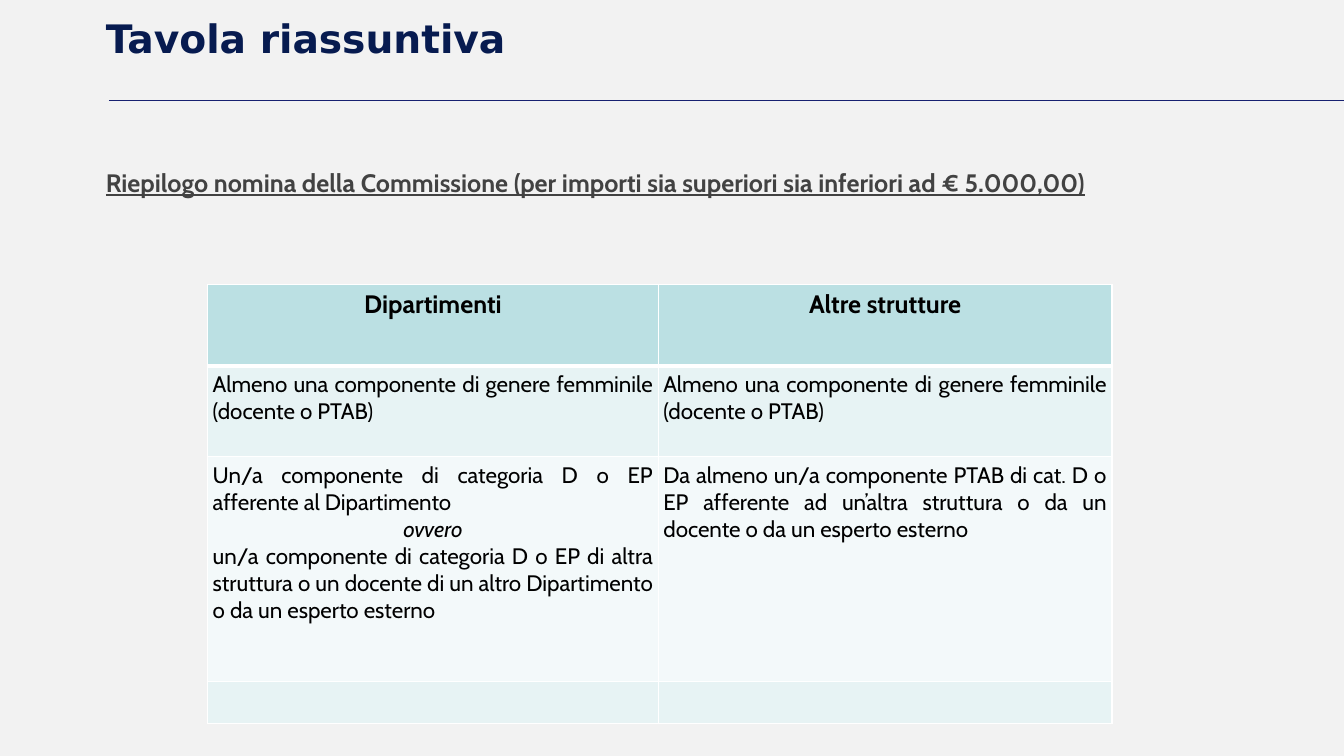
"""Build the summary slide on how the Commission is appointed."""
import lxml.etree
import pptx
import pptx.dml.color
import pptx.enum.shapes
import pptx.enum.text
import pptx.oxml.ns
import pptx.util

Inches = pptx.util.Inches
Pt = pptx.util.Pt
RGBColor = pptx.dml.color.RGBColor
Align = pptx.enum.text.PP_ALIGN
Anchor = pptx.enum.text.MSO_ANCHOR
qn = pptx.oxml.ns.qn

BACKGROUND = RGBColor(0xF2, 0xF2, 0xF2)
NAVY = RGBColor(0x07, 0x1B, 0x50)
RULE_BLUE = RGBColor(0x17, 0x21, 0x71)
GREY = RGBColor(0x42, 0x42, 0x42)
BLACK = RGBColor(0, 0, 0)
WHITE = RGBColor(0xFF, 0xFF, 0xFF)
HEADER_TEAL = RGBColor(0xBB, 0xE0, 0xE3)
BAND_TEAL = RGBColor(0xE7, 0xF3, 0xF4)
BAND_PALE = RGBColor(0xF3, 0xF9, 0xFA)

HEADINGS = ("Dipartimenti", "Altre strutture")
GENDER_RULE = "Almeno una componente di genere femminile (docente o PTAB)"
DEPARTMENT_RULE = (
    "Un/a componente di categoria D o EP afferente al Dipartimento",
    "ovvero",
    "un/a componente di categoria D o EP di altra struttura o un docente "
    "di un altro Dipartimento o da un esperto esterno",
)
OTHER_RULE = (
    "Da almeno un/a componente PTAB di cat. D o EP afferente ad un’altra "
    "struttura o da un docente o da un esperto esterno",
)
ROWS = (
    tuple((heading,) for heading in HEADINGS),
    ((GENDER_RULE,), (GENDER_RULE,)),
    (DEPARTMENT_RULE, OTHER_RULE),
    ((), ()),
)
ROW_FILLS = (HEADER_TEAL, BAND_TEAL, BAND_PALE, BAND_TEAL)
ROW_HEIGHTS = (0.81, 0.9, 2.23, 0.42)
COLUMN_WIDTHS = (4.47, 4.5)


class SummarySlide:
    """Hold the slide and its style, and draw each kind of element."""

    title_font = "DejaVu Sans"
    body_font = "Cabin"
    inset = Inches(0.05)

    def __init__(self, presentation):
        self.slide = presentation.slides.add_slide(presentation.slide_layouts[6])
        self.slide.background.fill.solid()
        self.slide.background.fill.fore_color.rgb = BACKGROUND

    def run(self, paragraph, words, size, color, font, bold=False, italic=False,
            underline=False):
        run = paragraph.add_run()
        run.text = words
        run.font.name = font
        run.font.size = Pt(size)
        run.font.color.rgb = color
        run.font.bold = bold
        run.font.italic = italic
        run.font.underline = underline

    def text(self, left, top, width, height, words, size, color, font,
             anchor=Anchor.TOP, spacing=1.0, underline=False):
        box = self.slide.shapes.add_textbox(
            Inches(left), Inches(top), Inches(width), Inches(height))
        frame = box.text_frame
        frame.word_wrap = True
        frame.vertical_anchor = anchor
        frame.margin_left = frame.margin_right = self.inset
        frame.margin_top = frame.margin_bottom = self.inset
        paragraph = frame.paragraphs[0]
        paragraph.line_spacing = spacing
        self.run(paragraph, words, size, color, font, bold=True, underline=underline)

    def rule(self, left, right, y):
        line = self.slide.shapes.add_connector(
            pptx.enum.shapes.MSO_CONNECTOR.STRAIGHT,
            Inches(left), Inches(y), Inches(right), Inches(y))
        line.line.color.rgb = RULE_BLUE
        line.line.width = Pt(0.75)
        lxml.etree.SubElement(line._element.spPr, qn("a:effectLst"))

    def borders(self, cell, widths):
        properties = cell._tc.get_or_add_tcPr()
        for side, width in widths.items():
            edge = lxml.etree.SubElement(properties, qn("a:ln" + side), w=str(Pt(width)))
            fill = lxml.etree.SubElement(edge, qn("a:solidFill"))
            lxml.etree.SubElement(fill, qn("a:srgbClr"), val=str(WHITE))

    def cell(self, cell, paragraphs, fill, header, below_header):
        cell.margin_left = cell.margin_right = self.inset
        cell.margin_top = cell.margin_bottom = self.inset
        self.borders(cell, {"L": 1, "R": 1, "T": 3 if below_header else 1,
                            "B": 3 if header else 1})
        cell.fill.solid()
        cell.fill.fore_color.rgb = fill
        frame = cell.text_frame
        for index, words in enumerate(paragraphs):
            paragraph = frame.add_paragraph() if index else frame.paragraphs[0]
            alternative = words == "ovvero"
            paragraph.alignment = Align.CENTER if header or alternative else Align.JUSTIFY
            self.run(paragraph, words, 18 if header else 16, BLACK, self.body_font,
                     bold=header, italic=alternative)

    def table(self, left, top, rows, fills, widths, heights):
        table = self.slide.shapes.add_table(
            len(rows), len(widths), Inches(left), Inches(top),
            Inches(sum(widths)), Inches(sum(heights))).table
        for column, width in zip(table.columns, widths):
            column.width = Inches(width)
        for row, height in zip(table.rows, heights):
            row.height = Inches(height)
        for r, (contents, fill) in enumerate(zip(rows, fills)):
            for c, paragraphs in enumerate(contents):
                self.cell(table.cell(r, c), paragraphs, fill, r == 0, r == 1)


def main():
    presentation = pptx.Presentation()
    presentation.slide_width = Inches(13.33)
    presentation.slide_height = Inches(7.5)
    summary = SummarySlide(presentation)
    summary.rule(1.08, 13.33, 1)
    summary.text(1, -0.25, 11.33, 1.25, "Tavola riassuntiva", 28, NAVY,
                 summary.title_font, anchor=Anchor.MIDDLE)
    summary.text(1, 1.46, 11.97, 5.36,
                 "Riepilogo nomina della Commissione (per importi sia superiori "
                 "sia inferiori ad € 5.000,00)",
                 18, GREY, summary.body_font, spacing=1.5, underline=True)
    summary.table(2.06, 2.82, ROWS, ROW_FILLS, COLUMN_WIDTHS, ROW_HEIGHTS)
    presentation.save("out.pptx")


if __name__ == "__main__":
    main()
